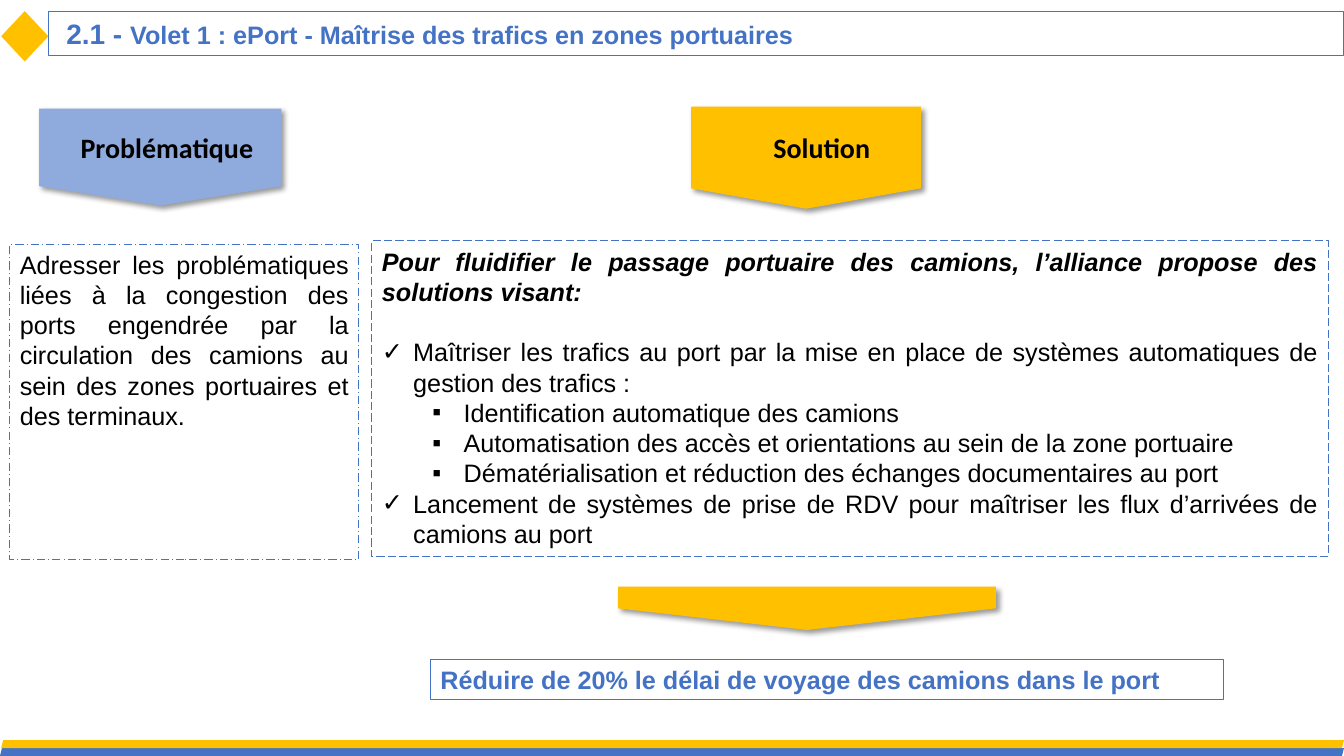
from lxml.etree import SubElement
from pptx import Presentation
from pptx.dml.color import RGBColor
from pptx.enum.dml import MSO_LINE
from pptx.enum.shapes import MSO_SHAPE
from pptx.enum.text import MSO_ANCHOR, MSO_AUTO_SIZE, PP_ALIGN
from pptx.oxml.ns import qn
from pptx.util import Cm, Pt

BLUE = RGBColor(0x44, 0x72, 0xC4)
LIGHT_BLUE = RGBColor(0x8F, 0xAA, 0xDC)
GOLD = RGBColor(0xFF, 0xC0, 0x00)
BLACK = RGBColor(0x00, 0x00, 0x00)

INTRO = "Pour fluidifier le passage portuaire des camions, l’alliance propose des solutions visant:"
SOLUTIONS = [
    (0, "Maîtriser les trafics au port par la mise en place de systèmes automatiques de gestion des trafics :"),
    (1, "Identification automatique des camions"),
    (1, "Automatisation des accès et orientations au sein de la zone portuaire"),
    (1, "Dématérialisation et réduction des échanges documentaires au port"),
    (0, "Lancement de systèmes de prise de RDV pour maîtriser les flux d’arrivées de camions au port"),
]
PROBLEM = (
    "Adresser les problématiques liées à la congestion des ports engendrée par la "
    "circulation des camions au sein des zones portuaires et des terminaux."
)
RESULT = "Réduire de 20% le délai de voyage des camions dans le port"


class SlideBuilder:
    font = "Arial"
    size = Pt(18)
    bullets = ("✓", "▪")

    def __init__(self, page):
        self.page = page

    def place(self, box, left, top, width, height):
        box.left, box.top = Cm(left), Cm(top)
        box.width, box.height = Cm(width), Cm(height)

    def frame(self, box, dash=None):
        box.line.color.rgb = BLUE
        box.line.width = Pt(0.75)
        if dash:
            box.line.dash_style = dash
        text = box.text_frame
        text.word_wrap = True
        text.auto_size = MSO_AUTO_SIZE.NONE
        text.vertical_anchor = MSO_ANCHOR.TOP
        return text

    def fill_para(self, para, text, color=BLACK, bold=False, align=PP_ALIGN.JUSTIFY):
        para.text = text
        para.alignment = align
        para.space_before = Pt(0)
        font = para.font
        font.name, font.size, font.bold = self.font, self.size, bold
        font.color.rgb = color

    def indent(self, para, margin, hanging=0.0, bullet=None):
        properties = para._p.get_or_add_pPr()
        properties.set("marL", str(Cm(margin)))
        properties.set("indent", str(Cm(-hanging)))
        if bullet:
            mark = properties.makeelement(qn("a:buChar"), {"char": bullet})
        else:
            mark = properties.makeelement(qn("a:buNone"), {})
        properties.insert_element_before(mark, "a:tabLst", "a:defRPr", "a:extLst")

    def shape(self, kind, color, *place):
        shape = self.page.shapes.add_shape(kind, *map(Cm, place))
        shape.shadow.inherit = False
        shape.fill.solid()
        shape.fill.fore_color.rgb = color
        shape.line.fill.background()
        return shape

    def cast_shadow(self, shape):
        effects = shape._element.spPr.find(qn("a:effectLst"))
        shadow = SubElement(effects, qn("a:outerShdw"), blurRad=str(Pt(4)), dist=str(Pt(3)),
                            dir="2700000", algn="tl", rotWithShape="0")
        color = SubElement(shadow, qn("a:srgbClr"), val=str(BLACK))
        SubElement(color, qn("a:alpha"), val="40000")

    def title(self, number, text, *place):
        box = self.page.shapes.title
        self.place(box, *place)
        frame = self.frame(box)
        frame.margin_left = Cm(0.45)
        para = frame.paragraphs[0]
        self.fill_para(para, number, BLUE, True, PP_ALIGN.LEFT)
        para.runs[0].font.size = Pt(20)
        para.add_run().text = text

    def solution_list(self, intro, items, *place):
        box = self.page.placeholders[1]
        self.place(box, *place)
        frame = self.frame(box, MSO_LINE.LONG_DASH)
        para = frame.paragraphs[0]
        self.fill_para(para, intro, bold=True)
        self.indent(para, 0)
        para.font.italic = True
        para.space_after = Pt(21.6)
        for level, text in items:
            para = frame.add_paragraph()
            self.fill_para(para, text)
            para.level = level
            self.indent(para, 0.79 + 1.27 * level, 0.79, self.bullets[level])

    def text_box(self, text, place, color=BLACK, bold=False, dash=None):
        box = self.page.shapes.add_textbox(*map(Cm, place))
        self.fill_para(self.frame(box, dash).paragraphs[0], text, color, bold)

    def heading(self, text, color, align, *place):
        shape = self.shape(MSO_SHAPE.FLOWCHART_OFFPAGE_CONNECTOR, color, *place)
        self.cast_shadow(shape)
        shape.text_frame.vertical_anchor = MSO_ANCHOR.MIDDLE
        para = shape.text_frame.paragraphs[0]
        self.fill_para(para, text, bold=True, align=align)
        self.indent(para, 0.79)
        para.font.name, para.font.size = "Calibri", Pt(20)
        para.space_before = para.space_after = Pt(1.5)

    def down_arrow(self, color, *place):
        shape = self.shape(MSO_SHAPE.PENTAGON, color, *place)
        shape.rotation = 90
        self.cast_shadow(shape)


def main():
    deck = Presentation()
    deck.slide_width, deck.slide_height = Cm(33.87), Cm(19.05)
    slide = SlideBuilder(deck.slides.add_slide(deck.slide_layouts[1]))

    slide.shape(MSO_SHAPE.PARALLELOGRAM, BLUE, 0, 18.85, 33.87, 0.2)
    slide.shape(MSO_SHAPE.PARALLELOGRAM, GOLD, 0.03, 18.65, 33.84, 0.2)
    slide.title("2.1 - ", "Volet 1 : ePort - Maîtrise des trafics en zones portuaires",
                1.22, 0.28, 32.65, 1.12)
    slide.shape(MSO_SHAPE.DIAMOND, GOLD, 0.03, 0.28, 1.19, 1.27)

    slide.heading("Problématique", LIGHT_BLUE, PP_ALIGN.JUSTIFY, 0.99, 2.74, 6.1, 2.44)
    slide.text_box(PROBLEM, (0.25, 6.15, 8.79, 7.95), dash=MSO_LINE.LONG_DASH_DOT)

    slide.heading("Solution", GOLD, PP_ALIGN.CENTER, 17.42, 2.69, 5.79, 2.57)
    slide.solution_list(INTRO, SOLUTIONS, 9.37, 6.07, 24.1, 7.95)

    slide.down_arrow(GOLD, 19.79, 10.57, 1.09, 9.52)
    slide.text_box(RESULT, (10.85, 16.61, 19.99, 1.02), BLUE, True)

    deck.save("out.pptx")


if __name__ == "__main__":
    main()
